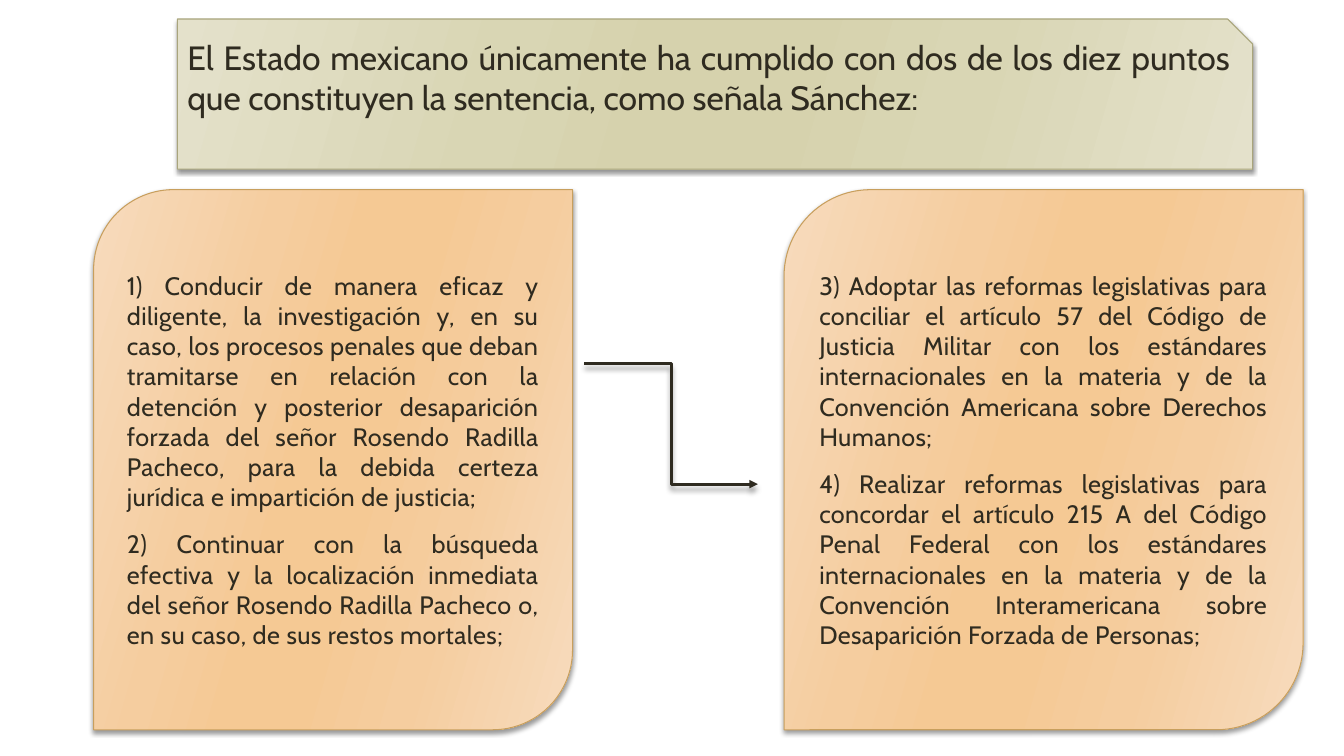
from lxml.etree import SubElement
from pptx import Presentation
from pptx.dml.color import RGBColor
from pptx.enum.shapes import MSO_CONNECTOR, MSO_SHAPE
from pptx.enum.text import MSO_ANCHOR, PP_ALIGN
from pptx.oxml.ns import qn
from pptx.util import Cm, Pt

# Content
TITLE = [
    "El Estado mexicano únicamente ha cumplido con dos de los diez puntos "
    "que constituyen la sentencia, como señala Sánchez:",
]
FIRST_POINTS = [
    "1) Conducir de manera eficaz y diligente, la investigación y, en su caso, "
    "los procesos penales que deban tramitarse en relación con la detención y "
    "posterior desaparición forzada del señor Rosendo Radilla Pacheco, para la "
    "debida certeza jurídica e impartición de justicia;",
    "2) Continuar con la búsqueda efectiva y la localización inmediata del "
    "señor Rosendo Radilla Pacheco o, en su caso, de sus restos mortales;",
]
LAST_POINTS = [
    "3) Adoptar las reformas legislativas para conciliar el artículo 57 del "
    "Código de Justicia Militar con los estándares internacionales en la "
    "materia y de la Convención Americana sobre Derechos Humanos;",
    "4) Realizar reformas legislativas para concordar el artículo 215 A del "
    "Código Penal Federal con los estándares internacionales en la materia y "
    "de la Convención Interamericana sobre Desaparición Forzada de Personas;",
]

# Formats: gradient shades run from edge to middle and back
INK = "2F2B20"
STOPS = (0, 30, 45, 55, 73, 100)
CARD = {
    "kind": MSO_SHAPE.ROUND_2_DIAG_RECTANGLE, "line": "C89F5D",
    "shades": ("F7DBBD", "F5CD9F", "F5C994"), "anchor": MSO_ANCHOR.MIDDLE,
    "font": {"name": "Cabin", "size": Pt(18)}, "spacing": 30,
}
BANNER = {
    "kind": MSO_SHAPE.SNIP_1_RECTANGLE, "line": "A9A57C",
    "shades": ("E4E1CB", "D9D6B4", "D6D2AD"), "anchor": MSO_ANCHOR.TOP,
    "font": {"name": "Cabin", "size": Pt(24)}, "spacing": 0,
}

# Layout in cm: left, top, width, height
CARD_TOP, CARD_HEIGHT = 4.78, 13.61
PANELS = [
    (FIRST_POINTS, CARD, (2.36, CARD_TOP, 12.07, CARD_HEIGHT)),
    (LAST_POINTS, CARD, (19.76, CARD_TOP, 13.08, CARD_HEIGHT)),
    (TITLE, BANNER, (4.47, 0.48, 27.1, 3.78)),
]
ARROW = (14.73, 9.17, 19.1, 12.2)


def color(value):
    return RGBColor.from_string(value)


def add_gradient(sp, shades):
    grad = sp._element.spPr.find(qn("a:gradFill"))
    grad.clear()
    grad.set("rotWithShape", "1")
    stops = SubElement(grad, qn("a:gsLst"))
    for pos, shade in zip(STOPS, shades + shades[::-1]):
        gs = SubElement(stops, qn("a:gs"), pos=str(pos * 1000))
        SubElement(gs, qn("a:srgbClr"), val=shade)
    SubElement(grad, qn("a:lin"), ang=str(16 * 60000), scaled="0")


def add_shadow(sp, blur, dist):
    effects = SubElement(sp._element.spPr, qn("a:effectLst"))
    shadow = SubElement(effects, qn("a:outerShdw"), blurRad=str(Pt(blur)),
                        dist=str(Pt(dist)), dir="5400000", rotWithShape="0")
    black = SubElement(shadow, qn("a:srgbClr"), val="000000")
    SubElement(black, qn("a:alpha"), val="40000")


def set_line(line, value, width):
    line.color.rgb = color(value)
    line.width = Pt(width)


def add_panel(s, texts, style, box):
    sp = s.shapes.add_shape(style["kind"], *map(Cm, box))
    sp.fill.gradient()
    add_gradient(sp, style["shades"])
    set_line(sp.line, style["line"], 0.75)
    add_shadow(sp, 3, 2)
    tf = sp.text_frame
    tf.word_wrap = True
    tf.vertical_anchor = style["anchor"]
    for i, text in enumerate(texts):
        p = tf.add_paragraph() if i else tf.paragraphs[0]
        p.alignment = PP_ALIGN.JUSTIFY
        p.space_before = Pt(12 if i else 0)
        r = p.add_run()
        r.text = text
        for name, value in style["font"].items():
            setattr(r.font, name, value)
        r.font.color.rgb = color(INK)
        r.font._element.set("spc", str(style["spacing"]))


def add_arrow(s, ends):
    sp = s.shapes.add_connector(MSO_CONNECTOR.ELBOW, *map(Cm, ends))
    set_line(sp.line, INK, 2)
    SubElement(sp._element.spPr.find(qn("a:ln")), qn("a:tailEnd"), type="triangle")
    add_shadow(sp, 4, 3.4)


def main():
    prs = Presentation()
    prs.slide_width, prs.slide_height = Cm(33.87), Cm(19.05)
    s = prs.slides.add_slide(prs.slide_layouts[6])
    for panel in PANELS:
        add_panel(s, *panel)
    add_arrow(s, ARROW)
    prs.save("out.pptx")


if __name__ == "__main__":
    main()
